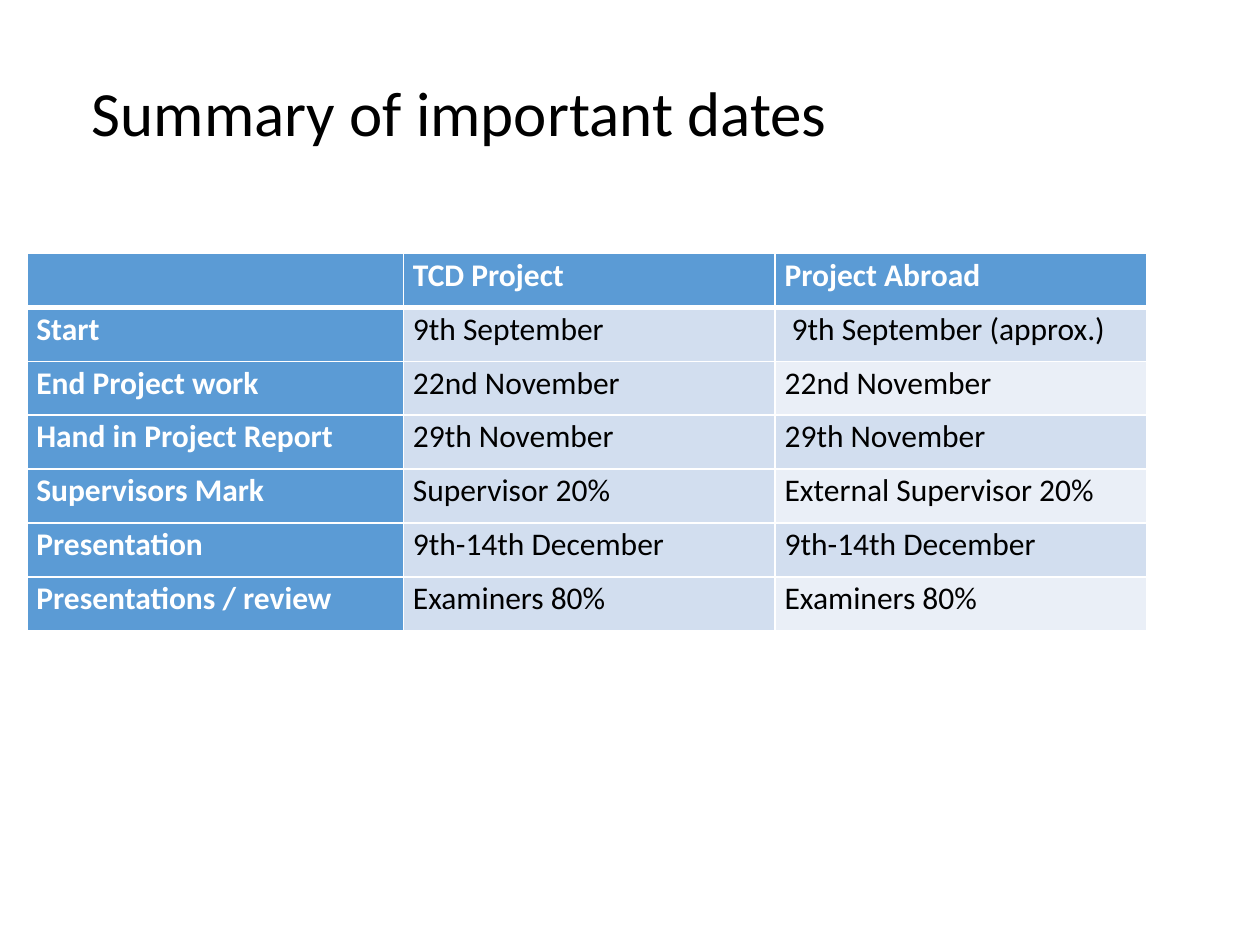
from lxml import etree
from pptx import Presentation
from pptx.dml.color import RGBColor
from pptx.enum.text import MSO_AUTO_SIZE, PP_ALIGN
from pptx.oxml.ns import qn
from pptx.util import Pt

JUSTIFY = PP_ALIGN.JUSTIFY
GROW = MSO_AUTO_SIZE.SHAPE_TO_FIT_TEXT

COLORS = {
    "ink": "000000",
    "white": "FFFFFF",
    "head": "5B9BD5",
    "band": "D2DEEF",
    "pale": "EAEFF7",
}

DATES = [
    ("", "TCD Project ", "Project Abroad"),
    ("Start", "9th September", " 9th September (approx.)"),
    ("End Project work", "22nd November", "22nd November"),
    ("Hand in Project Report", "29th November", "29th November"),
    ("Supervisors Mark", "Supervisor 20%", "External Supervisor 20%"),
    ("Presentation", "9th-14th December", "9th-14th December"),
    ("Presentations / review", "Examiners 80%", "Examiners 80%"),
]


class Deck:
    font = "Calibri"

    def __init__(self, width, height):
        self.prs = Presentation()
        self.prs.slide_width = Pt(width)
        self.prs.slide_height = Pt(height)
        self.slide = self.prs.slides.add_slide(self.prs.slide_layouts[6])

    def color(self, name):
        return RGBColor.from_string(COLORS[name])

    def style(self, para, size, color, bold=False):
        for run in para.runs:
            run.font.name = self.font
            run.font.size = Pt(size)
            run.font.bold = bold
            run.font.color.rgb = self.color(color)

    def title(self, text, left, top, width, height):
        box = self.slide.shapes.add_textbox(
            Pt(left), Pt(top), Pt(width), Pt(height))
        frame = box.text_frame
        frame.text = text
        frame.word_wrap = False
        frame.auto_size = GROW
        self.style(frame.paragraphs[0], 36, "ink")

    def borders(self, cell, widths):
        props = cell._tc.get_or_add_tcPr()
        for spot, (side, width) in enumerate(widths.items()):
            line = etree.Element(qn("a:ln" + side), w=str(Pt(width)))
            fill = etree.SubElement(line, qn("a:solidFill"))
            etree.SubElement(fill, qn("a:srgbClr"), val=COLORS["white"])
            props.insert(spot, line)

    def cell(self, cell, text, fill, head):
        cell.fill.solid()
        cell.fill.fore_color.rgb = self.color(fill)
        cell.margin_left = cell.margin_right = Pt(5.4)
        cell.margin_top = cell.margin_bottom = 0
        cell.text_frame.text = text
        para = cell.text_frame.paragraphs[0]
        para.alignment = JUSTIFY
        para.line_spacing = 1.07
        para.space_after = Pt(8)
        self.style(para, 18, "white" if head else "ink", head)

    def table(self, rows, left, top, widths, height):
        table = self.slide.shapes.add_table(
            len(rows), len(widths), Pt(left), Pt(top),
            Pt(sum(widths)), Pt(height * len(rows))).table
        for col, width in zip(table.columns, widths):
            col.width = Pt(width)
        for r, row in enumerate(rows):
            table.rows[r].height = Pt(height)
            for c, text in enumerate(row):
                # Header row and first column are solid; the last is banded
                head = r == 0 or c == 0
                pale = c == 2 and r % 2 == 0
                fill = "head" if head else "pale" if pale else "band"
                cell = table.cell(r, c)
                self.cell(cell, text, fill, head)
                self.borders(cell, {"L": 1, "R": 1,
                                    "T": 3 if r == 1 else 1,
                                    "B": 3 if r == 0 else 1})


def main():
    deck = Deck(720, 540)
    # Table of dates
    deck.table(DATES, 15.4, 144.9, [215.2, 212.4, 212.4], 30.8)
    # Heading
    deck.title("Summary of important dates", 45.4, 38.2, 438.5, 51)
    deck.prs.save("out.pptx")


if __name__ == "__main__":
    main()
